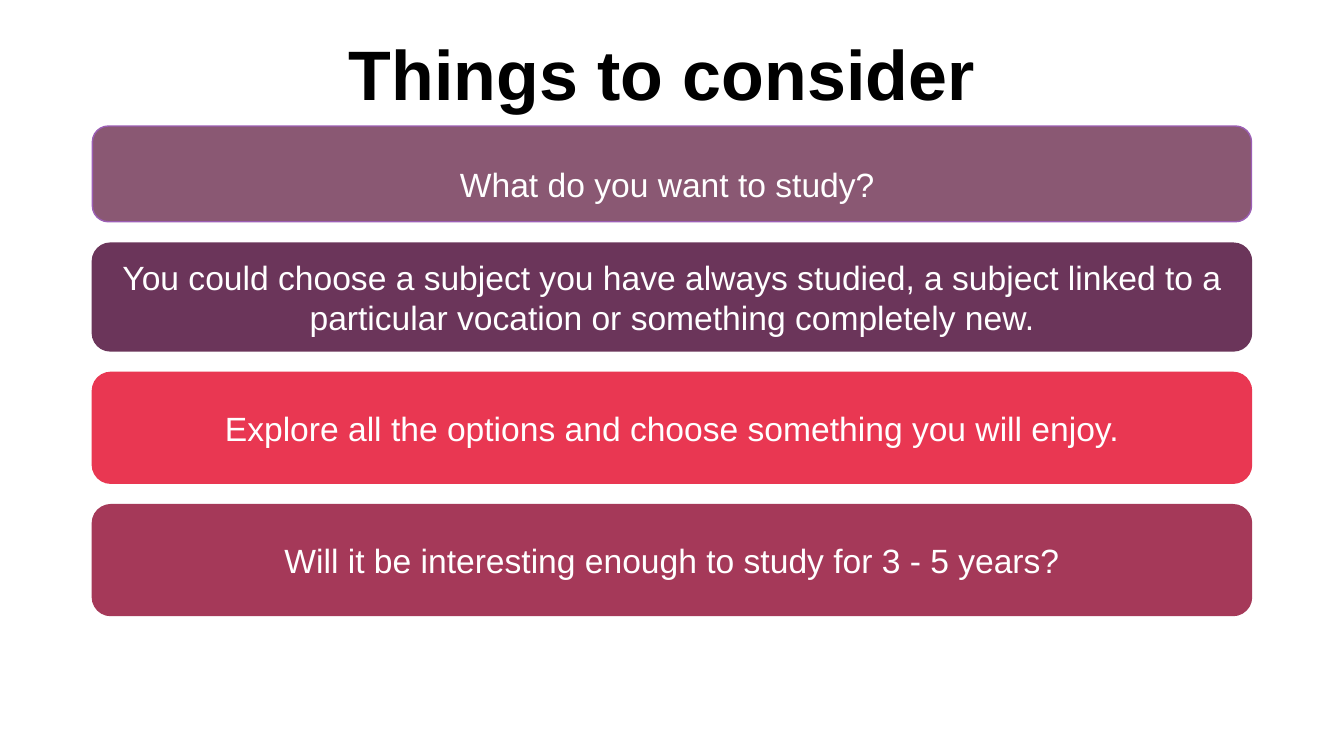
from pptx import Presentation
from pptx import util as u
from pptx.dml import color
from pptx.enum import shapes, text

BARS = [
    ("What do you want to study? ", 68.4, "8A5873", "9C5FB5", 1.5),
    ("You could choose a subject you have always studied, a subject linked to "
     "a particular vocation or something completely new.", 77, "6B355A", "6B355A", 1),
    ("Explore all the options and choose something you will enjoy.",
     79.2, "E93752", "E93752", 1),
    ("Will it be interesting enough to study for 3 - 5 years?",
     79.2, "A53959", "A53959", 1),
]
GAP = 15.3


def paint(fmt, code):
    """Set a solid fill from a hex string."""
    fmt.solid()
    fmt.fore_color.rgb = color.RGBColor.from_string(code)


def write(frame, words, size, code, lead, bold, anchor):
    """Write one centred paragraph in a frame."""
    frame.word_wrap = True
    frame.vertical_anchor = anchor
    para = frame.paragraphs[0]
    para.alignment = text.PP_ALIGN.CENTER
    para.line_spacing = lead
    run = para.add_run()
    run.text = words
    run.font.name = "Arial"
    run.font.size = u.Pt(size)
    run.font.bold = bold
    paint(run.font.fill, code)


def head(slide, left, top, width, height):
    """Place the title in its box."""
    box = slide.shapes.add_textbox(u.Pt(left), u.Pt(top), u.Pt(width), u.Pt(height))
    write(box.text_frame, "Things to consider ", 50, "000000", 0.9, True,
          text.MSO_ANCHOR.TOP)


def stack(slide, left, top, width):
    """Stack the rounded bars downward with equal gaps."""
    for words, height, fill, edge, lead in BARS:
        bar = slide.shapes.add_shape(
            shapes.MSO_SHAPE.ROUNDED_RECTANGLE,
            u.Pt(left), u.Pt(top), u.Pt(width), u.Pt(height))
        bar.shadow.inherit = False
        paint(bar.fill, fill)
        paint(bar.line.fill, edge)
        bar.line.width = u.Pt(1)
        write(bar.text_frame, words, 24, "FFFFFF", lead, False,
              text.MSO_ANCHOR.MIDDLE)
        top += height + GAP


def main():
    """Build and save the slide."""
    deck = Presentation()
    deck.slide_width, deck.slide_height = u.Pt(960), u.Pt(540)
    slide = deck.slides.add_slide(deck.slide_layouts[6])
    head(slide, 66, 25.2, 828, 104.4)
    stack(slide, 66, 90, 828)
    deck.save("out.pptx")


if __name__ == "__main__":
    main()
